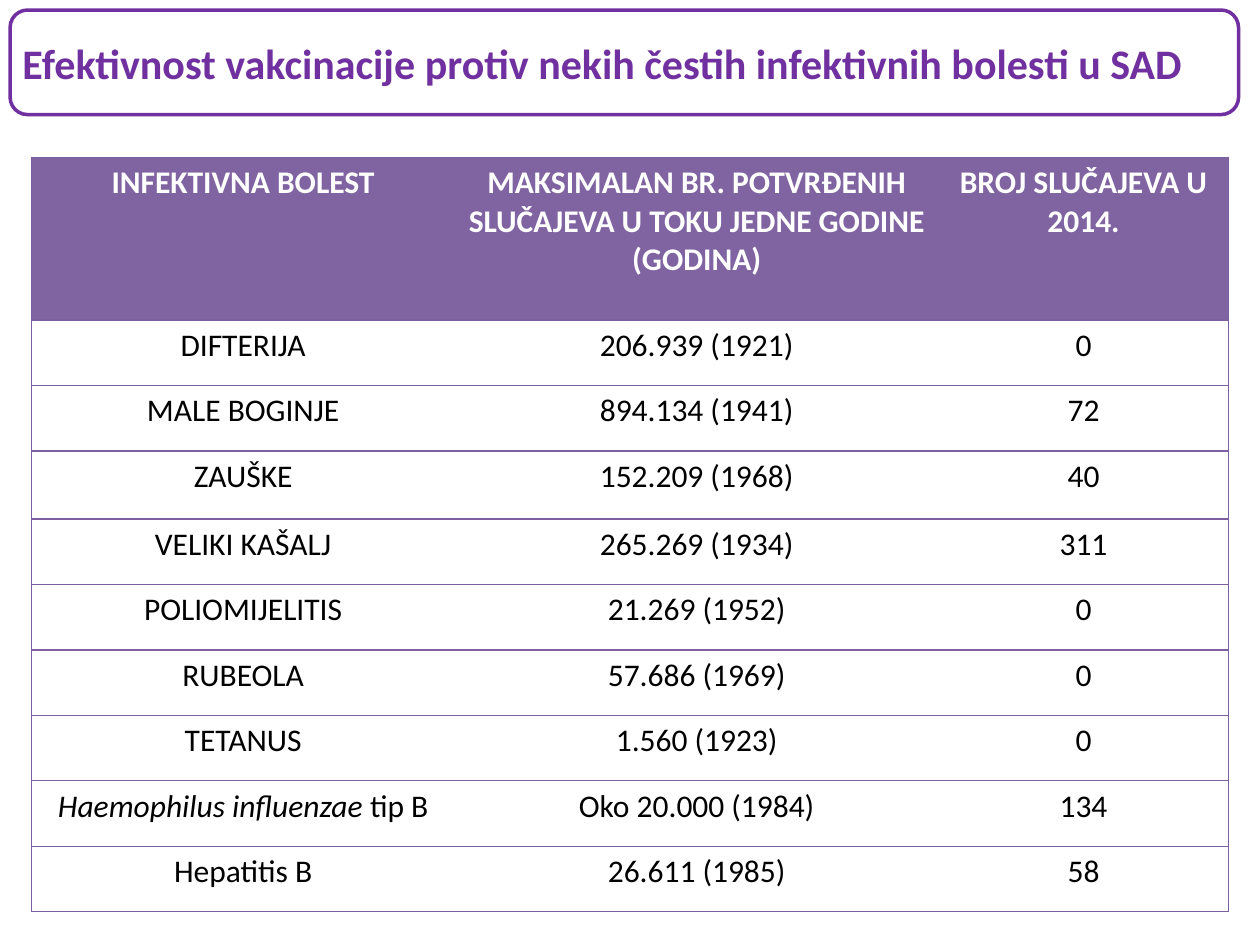
from lxml import etree
from pptx import Presentation
from pptx.dml.color import RGBColor
from pptx.enum import shapes, text
from pptx.oxml import ns
from pptx.util import Inches, Pt

COLORS = {"title": "7030A0", "header": "8064A2", "border": "7D60A0",
          "header_text": "FFFFFF", "body_text": "000000"}
COLUMN_WIDTHS = [3.36, 3.84, 2.3]
ROW_HEIGHTS = [1.29, 0.52, 0.52, 0.54] + [0.52] * 6
ROWS = [
    ("INFEKTIVNA BOLEST",
     "MAKSIMALAN BR. POTVRĐENIH SLUČAJEVA U TOKU JEDNE GODINE (GODINA)",
     "BROJ SLUČAJEVA U 2014."),
    ("DIFTERIJA", "206.939 (1921)", "0"),
    ("MALE BOGINJE", "894.134 (1941)", "72"),
    ("ZAUŠKE", "152.209 (1968)", "40"),
    ("VELIKI KAŠALJ", "265.269 (1934)", "311"),
    ("POLIOMIJELITIS", "21.269 (1952)", "0"),
    ("RUBEOLA", "57.686 (1969)", "0"),
    ("TETANUS", "1.560 (1923)", "0"),
    ("Haemophilus influenzae |tip B", "Oko 20.000 (1984)", "134"),
    ("Hepatitis B", "26.611 (1985)", "58"),
]


def add_run(paragraph, wording, size, color, bold=False, italic=False):
    run = paragraph.add_run()
    run.text = wording
    run.font.name = "Calibri"
    run.font.size = Pt(size)
    run.font.bold = bold
    run.font.italic = italic
    run.font.color.rgb = RGBColor.from_string(COLORS[color])


def add_border(cell, side, visible):
    properties = cell._tc.get_or_add_tcPr()
    line = etree.SubElement(properties, ns.qn(f"a:ln{side}"), w=str(Pt(0.75)))
    if visible:
        fill = etree.SubElement(line, ns.qn("a:solidFill"))
        etree.SubElement(fill, ns.qn("a:srgbClr"), val=COLORS["border"])
    else:
        etree.SubElement(line, ns.qn("a:noFill"))


deck = Presentation()
deck.slide_width = Inches(10)
deck.slide_height = Inches(7.5)
slide = deck.slides.add_slide(deck.slide_layouts[6])

title = slide.shapes.add_textbox(Inches(0.08), Inches(0.25), Inches(9.92), Inches(0.5))
title.text_frame.word_wrap = True
title.text_frame.auto_size = text.MSO_AUTO_SIZE.SHAPE_TO_FIT_TEXT
add_run(title.text_frame.paragraphs[0],
        "Efektivnost vakcinacije protiv nekih čestih infektivnih bolesti u SAD",
        24, "title", bold=True)

title_frame = slide.shapes.add_shape(
    shapes.MSO_SHAPE.ROUNDED_RECTANGLE,
    Inches(0.08), Inches(0.08), Inches(9.75), Inches(0.83))
title_frame.shadow.inherit = False
title_frame.fill.background()
title_frame.line.color.rgb = RGBColor.from_string(COLORS["title"])
title_frame.line.width = Pt(2)

cases = slide.shapes.add_table(
    len(ROWS), len(COLUMN_WIDTHS),
    Inches(0.25), Inches(1.25), Inches(9.5), Inches(6)).table
cases.horz_banding = False
for column, width in zip(cases.columns, COLUMN_WIDTHS):
    column.width = Inches(width)
for row, height in zip(cases.rows, ROW_HEIGHTS):
    row.height = Inches(height)

last_column = len(COLUMN_WIDTHS) - 1
for row_index, entries in enumerate(ROWS):
    is_header = row_index == 0
    for column_index, entry in enumerate(entries):
        cell = cases.cell(row_index, column_index)
        add_border(cell, "L", column_index == 0)
        add_border(cell, "R", column_index == last_column)
        add_border(cell, "T", True)
        add_border(cell, "B", True)
        if is_header:
            cell.fill.solid()
            cell.fill.fore_color.rgb = RGBColor.from_string(COLORS["header"])
        else:
            cell.fill.background()
        paragraph = cell.text_frame.paragraphs[0]
        paragraph.alignment = text.PP_ALIGN.CENTER
        parts = entry.split("|")
        for part_index, part in enumerate(parts):
            add_run(paragraph, part, 18,
                    "header_text" if is_header else "body_text",
                    bold=is_header,
                    italic=len(parts) > 1 and part_index == 0)

deck.save("out.pptx")
